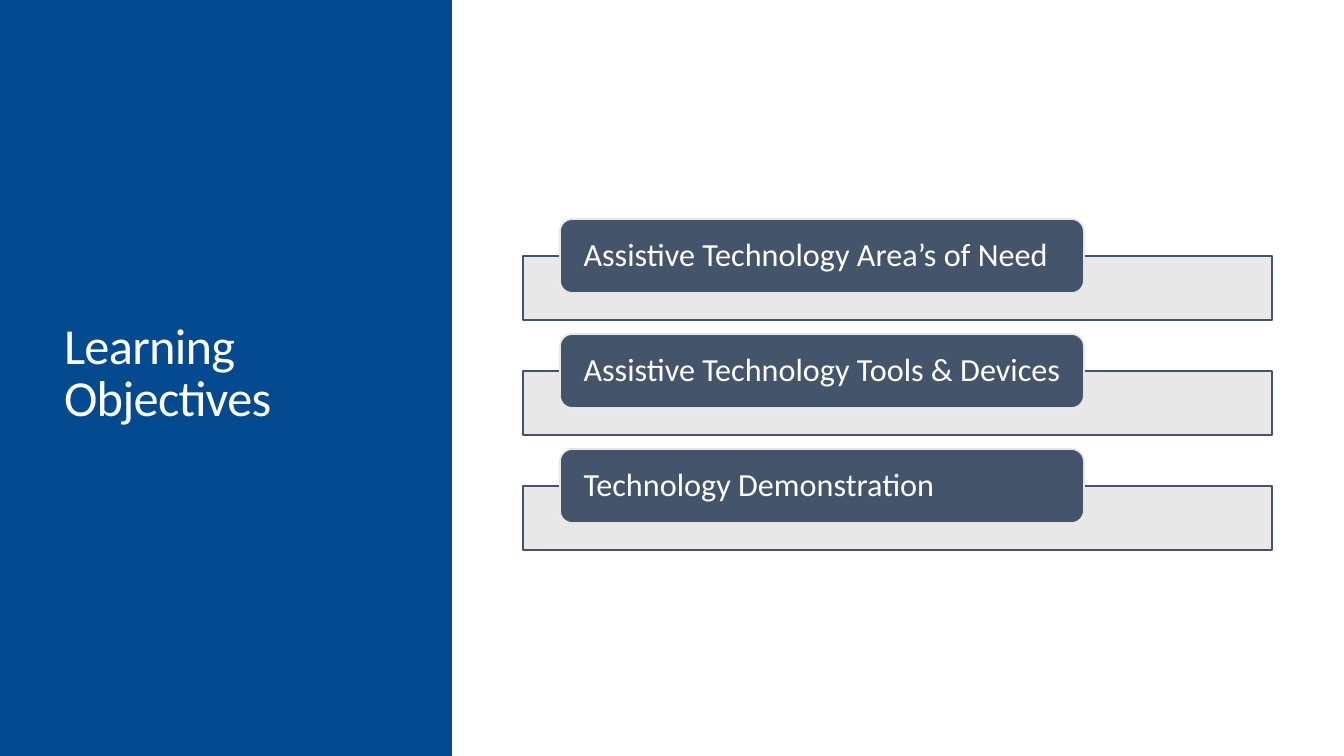
from pptx import Presentation, util as u
from pptx.dml.color import RGBColor
from pptx.enum import shapes, text
from pptx.oxml import parse_xml
from pptx.oxml.ns import nsdecls

SCALE = 12192000 / 1344
COLORS = {"blue": "034A90", "slate": "44546A", "grey": "E7E6E6", "white": "FFFFFF"}


def add_block(kind, box, fill, line=None):
    block = slide.shapes.add_shape(kind, *[u.Emu(round(px * SCALE)) for px in box])
    block.shadow.inherit = False
    block.fill.solid()
    block.fill.fore_color.rgb = RGBColor.from_string(COLORS[fill])
    if line:
        block.line.color.rgb = RGBColor.from_string(COLORS[line])
        block.line.width = u.Pt(1.25)
    else:
        block.line.fill.background()
    return block


def write(holder, words, size, spacing, insets):
    frame = holder.text_frame
    frame.word_wrap = True
    frame.vertical_anchor = text.MSO_ANCHOR.MIDDLE
    frame.margin_left, frame.margin_right = [u.Emu(round(px * SCALE)) for px in insets]
    frame.margin_top = frame.margin_bottom = 0
    paragraph = frame.paragraphs[0]
    paragraph.alignment = text.PP_ALIGN.LEFT
    paragraph.line_spacing = spacing
    run = paragraph.add_run()
    run.text = words
    run.font.name = "Calibri"
    run.font.size = u.Pt(size)
    run.font.color.rgb = RGBColor.from_string(COLORS["white"])
    return run


deck = Presentation()
deck.slide_width = u.Emu(12192000)
deck.slide_height = u.Emu(6858000)
slide = deck.slides.add_slide(deck.slide_layouts[6])

add_block(shapes.MSO_SHAPE.RECTANGLE, (0, 0, 446, 756), "blue")
add_block(shapes.MSO_SHAPE.RECTANGLE, (445, 0, 7, 756), "blue")

heading = slide.shapes.add_textbox(*[u.Emu(round(px * SCALE)) for px in (54, 57, 340, 636)])
heading_run = write(heading, "Learning Objectives", 36, 0.85, (10, 10))
heading_run.font._element.set("spc", "-50")

objectives = [
    "Assistive Technology Area’s of Need",
    "Assistive Technology Tools & Devices",
    "Technology Demonstration",
]
for row, objective in enumerate(objectives):
    top = 219 + 115 * row
    bar = add_block(shapes.MSO_SHAPE.RECTANGLE, (523, top + 37, 749, 64), "grey", "slate")
    bar_color = bar.fill._xPr.solidFill[0]
    bar_color.append(parse_xml(f'<a:alpha {nsdecls("a")} val="90000"/>'))
    label = add_block(shapes.MSO_SHAPE.ROUNDED_RECTANGLE, (560, top, 524, 74), "slate", "grey")
    write(label, objective, 23, 0.9, (20, 16))

deck.save("out.pptx")
